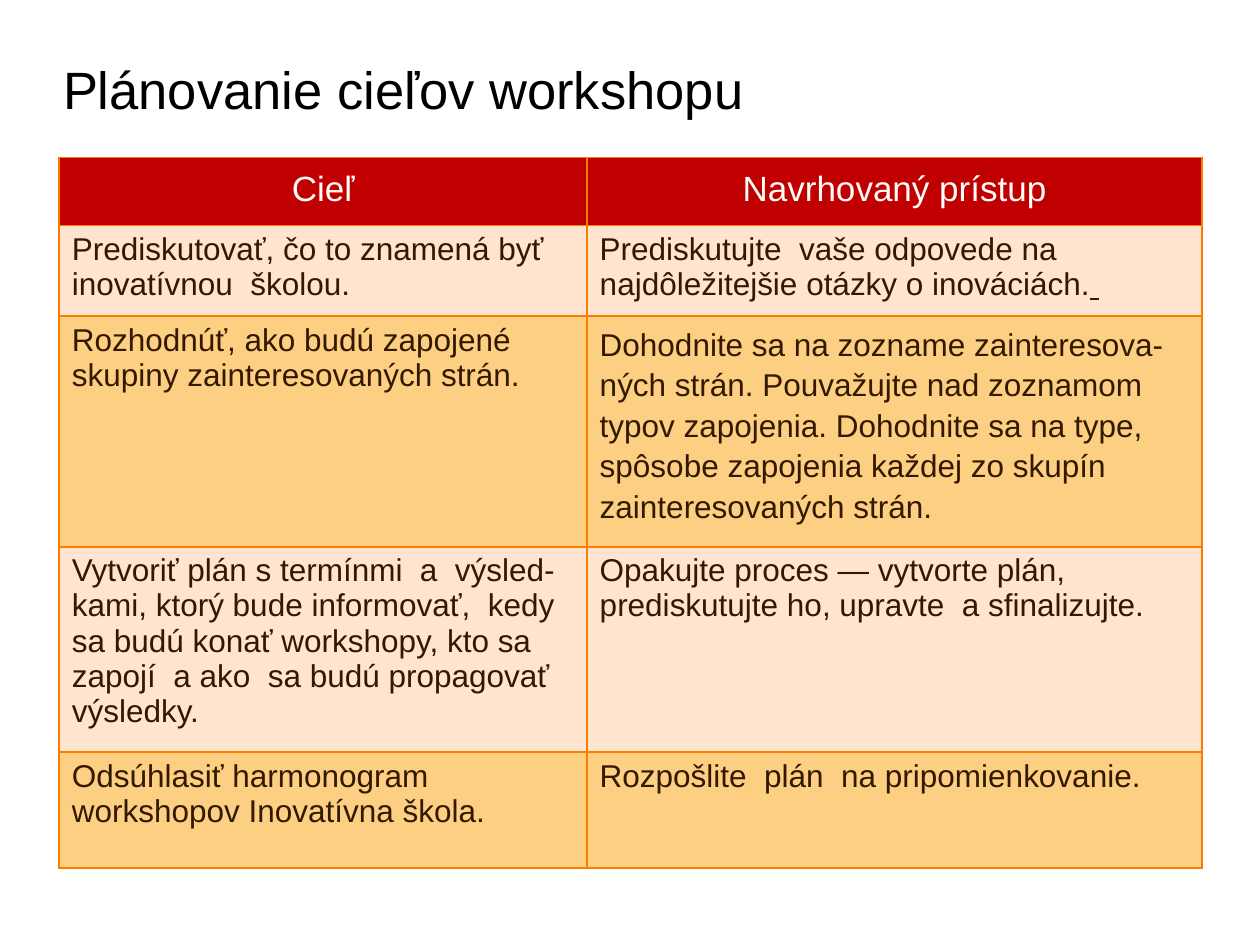
from lxml import etree
from pptx import Presentation
from pptx.dml.color import RGBColor as RGB
from pptx.enum.text import MSO_ANCHOR as ANCHOR, PP_ALIGN as ALIGN
from pptx.oxml.ns import qn
from pptx.util import Inches, Pt

HUES = {"title": "000000", "head": "FFFCF9", "body": "321900", "red": "C00000",
        "pale": "FFE5CF", "gold": "FDCF83", "edge": "FC7E00"}
ROWS = [
    (0.54, "Cieľ", "Navrhovaný prístup"),
    (0.72, "Prediskutovať, čo to znamená byť inovatívnou  školou.",
     "Prediskutujte  vaše odpovede na najdôležitejšie otázky o inováciách."),
    (1.83, "Rozhodnúť, ako budú zapojené skupiny zainteresovaných strán.",
     "Dohodnite sa na zozname zainteresova-ných strán. Pouvažujte nad zoznamom "
     "typov zapojenia. Dohodnite sa na type, spôsobe zapojenia každej zo skupín "
     "zainteresovaných strán."),
    (1.63, "Vytvoriť plán s termínmi  a  výsled-kami, ktorý bude informovať,  kedy "
     "sa budú konať workshopy, kto sa zapojí  a ako  sa budú propagovať  výsledky.",
     "Opakujte proces — vytvorte plán,\nprediskutujte ho, upravte  a sfinalizujte."),
    (0.92, "Odsúhlasiť harmonogram workshopov Inovatívna škola.",
     "Rozpošlite  plán  na pripomienkovanie."),
]


def style(run, size, hue):
    run.font.name = "Arial"
    run.font.size = Pt(size)
    run.font.color.rgb = RGB.from_string(HUES[hue])


def border(cell):
    props = cell._tc.get_or_add_tcPr()
    for i, side in enumerate(("a:lnL", "a:lnR", "a:lnT", "a:lnB")):
        line = etree.Element(qn(side), w=str(Pt(1)))
        fill = etree.SubElement(line, qn("a:solidFill"))
        etree.SubElement(fill, qn("a:srgbClr"), val=HUES["edge"])
        props.insert(i, line)


deck = Presentation()
deck.slide_width, deck.slide_height = Inches(10), Inches(7.5)
slide = deck.slides.add_slide(deck.slide_layouts[5])

title = slide.shapes.title
title.left, title.top = Inches(0.4), Inches(0.4)
title.width, title.height = Inches(7.34), Inches(0.87)
frame = title.text_frame
frame.text = "Plánovanie cieľov workshopu"
frame.vertical_anchor = ANCHOR.TOP
frame.paragraphs[0].alignment = ALIGN.LEFT
style(frame.paragraphs[0].runs[0], 30, "title")

table = slide.shapes.add_table(len(ROWS), 2, Inches(0.47), Inches(1.25),
                               Inches(9.07), Inches(5.64)).table
table.columns[0].width, table.columns[1].width = Inches(4.19), Inches(4.88)
for r, (height, *texts) in enumerate(ROWS):
    table.rows[r].height = Inches(height)
    for c, text in enumerate(texts):
        cell = table.cell(r, c)
        cell.text_frame.text = text
        cell.fill.solid()
        fill = "red" if r == 0 else "pale" if r % 2 else "gold"
        cell.fill.fore_color.rgb = RGB.from_string(HUES[fill])
        border(cell)
        if r == 0:
            cell.margin_top = cell.margin_bottom = Inches(0.1)
        for para in cell.text_frame.paragraphs:
            para.alignment = ALIGN.LEFT if r else ALIGN.CENTER
            for run in para.runs:
                style(run, 18 if r else 20, "body" if r else "head")
                run.font.bold = False

tail = table.cell(1, 1).text_frame.paragraphs[0].add_run()
tail.text = " "
style(tail, 18, "body")
tail.font.underline = True
table.cell(2, 1).text_frame.paragraphs[0].line_spacing = 1.15

deck.save("out.pptx")
